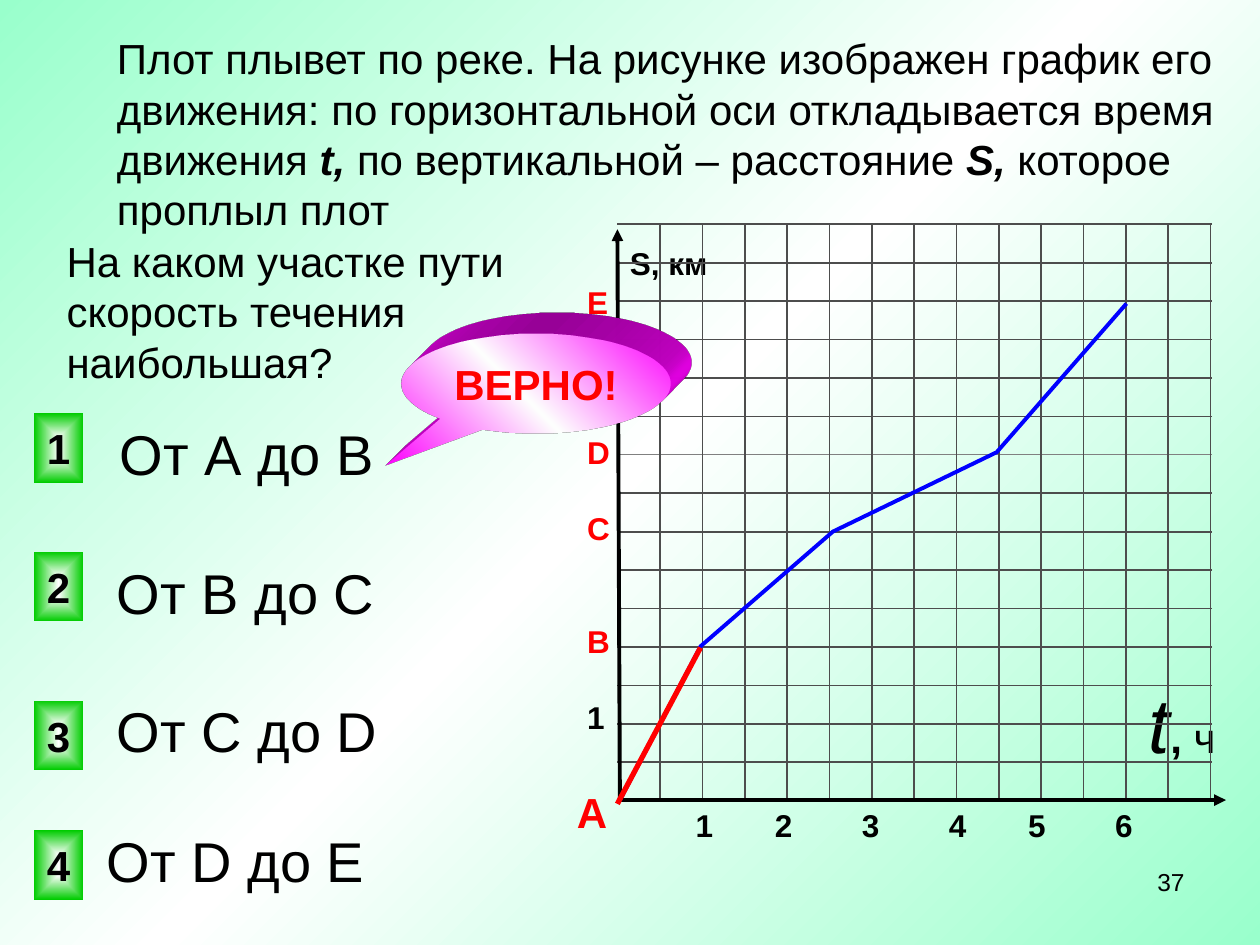
from lxml import etree
from pptx import Presentation
from pptx.dml.color import RGBColor
from pptx.enum.dml import MSO_THEME_COLOR
from pptx.enum.shapes import MSO_CONNECTOR, MSO_SHAPE
from pptx.enum.text import MSO_ANCHOR, PP_ALIGN
from pptx.oxml import parse_xml
from pptx.oxml.ns import nsdecls, qn
from pptx.util import Inches, Pt

BLACK = RGBColor(0x00, 0x00, 0x00)
WHITE = RGBColor(0xFF, 0xFF, 0xFF)
RED = RGBColor(0xFF, 0x00, 0x00)
BLUE = RGBColor(0x00, 0x00, 0xFF)
MINT = RGBColor(0x99, 0xFF, 0xCC)
GREEN = RGBColor(0x00, 0xCC, 0x00)
MAGENTA = RGBColor(0xFF, 0x00, 0xFF)
GRID = RGBColor(0x4D, 0x4D, 0x4D)
LIGHT_GRID = RGBColor(0x80, 0x80, 0x80)
FONT = "Arial"
LEFT, CENTER, RIGHT = PP_ALIGN.LEFT, PP_ALIGN.CENTER, PP_ALIGN.RIGHT
MIDDLE, TOP = MSO_ANCHOR.MIDDLE, MSO_ANCHOR.TOP
STRAIGHT = MSO_CONNECTOR.STRAIGHT

PROBLEM = [
    [("Плот плывет по реке. На рисунке изображен график его", False)],
    [("движения: по горизонтальной оси откладывается время", False)],
    [("движения ", False), ("t, ", True), ("по вертикальной – расстояние ", False),
     ("S, ", True), ("которое", False)],
    [("проплыл плот", False)],
]
ANSWERS = [
    ("1", 3.28, "От А до В", 0.85, 3.28),
    ("2", 4.38, "От В до С", 0.83, 4.38),
    ("3", 5.56, "От С до D", 0.83, 5.48),
    ("4", 6.59, "От D до E", 0.75, 6.51),
]
DISTANCE_LABELS = [("E", 0.62, RED), ("D", 1.81, RED), ("С", 2.41, RED),
                   ("В", 3.31, RED), ("1", 3.91, BLACK)]
TIME_LABELS = [("1", 0.69), ("2", 1.32), ("3", 2.01), ("4", 2.7), ("5", 3.33), ("6", 4.02)]
MOTION = [(0.02, 4.57), (0.66, 3.35), (1.71, 2.44), (3.01, 1.81), (4.04, 0.63)]
FASTEST = [(0.66, 3.36), (0, 4.6)]


def add_run(paragraph, text, size, color=BLACK, bold=False, italic=False):
    """Append one formatted run to a paragraph."""
    run = paragraph.add_run()
    run.text = text
    font = run.font
    font.name, font.size, font.bold, font.italic = FONT, Pt(size), bold, italic
    font.color.rgb = color


def add_text_box(slide, left, top, width, height, wrap=False, margins=True):
    """Add an empty text box and return its text frame."""
    box = slide.shapes.add_textbox(Inches(left), Inches(top), Inches(width), Inches(height))
    frame = box.text_frame
    frame.word_wrap = wrap
    if not margins:
        frame.margin_left = frame.margin_right = frame.margin_top = frame.margin_bottom = 0
    return frame


def add_label(slide, left, top, width, height, text, size, color=BLACK, bold=False,
              align=LEFT, wrap=False, margins=True, anchor=TOP):
    """Add a text box that holds a single run."""
    frame = add_text_box(slide, left, top, width, height, wrap, margins)
    frame.vertical_anchor = anchor
    paragraph = frame.paragraphs[0]
    paragraph.alignment = align
    add_run(paragraph, text, size, color, bold)


def set_gradient(fill, element, stops, direction):
    """Give the fill inside an element gradient stops and a direction."""
    fill.solid()
    fill.fore_color.theme_color = MSO_THEME_COLOR.ACCENT_1
    solid = next(element.iter(qn("a:solidFill")))
    stop_xml = "".join(
        f'<a:gs pos="{position * 1000}"><a:srgbClr val="{color}"/></a:gs>'
        for position, color in stops)
    gradient = parse_xml(f'<a:gradFill {nsdecls("a")} rotWithShape="1">'
                         f"<a:gsLst>{stop_xml}</a:gsLst>{direction}</a:gradFill>")
    solid.getparent().replace(solid, gradient)


def add_line(slide, start, end, color, width, arrow=False):
    """Draw a straight line, with an arrowhead at its end if asked."""
    connector = slide.shapes.add_connector(
        STRAIGHT, *(Inches(value) for value in (*start, *end)))
    connector.line.color.rgb = color
    connector.line.width = Pt(width)
    if arrow:
        etree.SubElement(connector.line._get_or_add_ln(), qn("a:tailEnd"), type="triangle")
    etree.SubElement(connector._element.spPr, qn("a:effectLst"))


def add_polyline(slide, left, top, points, color, width):
    """Draw an open outline through points relative to a corner."""
    vertices = [(Inches(left + x), Inches(top + y)) for x, y in points]
    builder = slide.shapes.build_freeform(*vertices[0])
    builder.add_line_segments(vertices[1:], close=False)
    shape = builder.convert_to_shape()
    shape.shadow.inherit = False
    shape.fill.background()
    shape.line.color.rgb = color
    shape.line.width = Pt(width)


def add_grid(slide, left, top, width, height):
    """Draw the squared field with its two axes."""
    row_step, column_step = 0.305, 0.336
    for row in range(15):
        y = top + row * row_step
        color, weight = (LIGHT_GRID, 0.75) if row == 6 else (GRID, 1)
        add_line(slide, (left, y), (left + width, y), color, weight)
    for column in range(14):
        x = left + 0.34 + column * column_step
        add_line(slide, (x, top), (x, top + height), GRID, 1)
    origin = (left + 0.02, top + 4.57)
    add_line(slide, origin, (left + 4.83, origin[1]), BLACK, 2.25, True)
    add_line(slide, origin, (left, top + 0.04), BLACK, 2.25, True)


def add_axis_labels(slide, left, top):
    """Name the axes and mark their values."""
    style = {"bold": True, "margins": False, "anchor": MIDDLE}
    add_label(slide, left + 0.1, top + 0.16, 0.7, 0.3, "S, км", 18, **style)
    for text, center, color in DISTANCE_LABELS:
        add_label(slide, left - 0.24, top + center - 0.15, 0.2, 0.3, text, 18, color, **style)
    for text, center in TIME_LABELS:
        add_label(slide, left + center - 0.15, top + 4.62, 0.3, 0.3, text, 18,
                  align=CENTER, **style)
    paragraph = add_text_box(slide, left + 4.12, top + 3.54, 0.82, 0.83).paragraphs[0]
    add_run(paragraph, "t", 44, italic=True)
    add_run(paragraph, ", ", 24, bold=True)
    add_run(paragraph, "ч", 24)


def add_graph(slide, left, top, width, height):
    """Build the distance graph in its box."""
    add_axis_labels(slide, left, top)
    add_grid(slide, left, top, width, height)
    add_polyline(slide, left, top, MOTION, BLUE, 2.25)
    add_polyline(slide, left, top, FASTEST, RED, 3)
    add_label(slide, left - 0.42, top + 4.41, 0.44, 0.5, "А", 24, RED, True)


def add_problem(slide, left, top, width, height):
    """Write the problem statement."""
    frame = add_text_box(slide, left, top, width, height)
    for index, line in enumerate(PROBLEM):
        paragraph = frame.add_paragraph() if index else frame.paragraphs[0]
        for text, emphasis in line:
            add_run(paragraph, text, 24, bold=emphasis, italic=emphasis)


def add_filled_shape(slide, kind, box, text, color, stops, direction):
    """Add a gradient shape with centred bold text and return it."""
    shape = slide.shapes.add_shape(kind, *(Inches(value) for value in box))
    shape.shadow.inherit = False
    shape.line.fill.background()
    set_gradient(shape.fill, shape._element.spPr, stops, direction)
    frame = shape.text_frame
    frame.word_wrap = False
    frame.vertical_anchor = MIDDLE
    frame.paragraphs[0].alignment = CENTER
    add_run(frame.paragraphs[0], text, 24, color, True)
    return shape


def add_answer(slide, number, button_top, text, left, top):
    """Place one numbered button with its answer."""
    center = ('<a:path path="rect"><a:fillToRect l="50000" t="50000" '
              'r="50000" b="50000"/></a:path>')
    add_filled_shape(slide, MSO_SHAPE.ACTION_BUTTON_CUSTOM, (0.27, button_top, 0.39, 0.55),
                     number, BLACK, [(0, WHITE), (100, GREEN)], center)
    add_label(slide, left, top, 2.37, 0.63, text, 32)


def add_callout(slide, left, top, width, height):
    """Add the raised speech bubble that confirms the answer."""
    callout = add_filled_shape(
        slide, MSO_SHAPE.OVAL_CALLOUT, (left, top, width, height), "ВЕРНО!", RED,
        [(0, MAGENTA), (50, WHITE), (100, MAGENTA)], '<a:lin ang="18900000" scaled="1"/>')
    callout.adjustments[0], callout.adjustments[1] = -0.56, 0.82
    properties = callout._element.spPr
    properties.append(parse_xml(
        f'<a:scene3d {nsdecls("a")}><a:camera prst="legacyObliqueTopRight"/>'
        '<a:lightRig rig="legacyFlat3" dir="b"/></a:scene3d>'))
    properties.append(parse_xml(
        f'<a:sp3d {nsdecls("a")} extrusionH="430200" prstMaterial="legacyMatte">'
        f'<a:extrusionClr><a:srgbClr val="{MAGENTA}"/></a:extrusionClr></a:sp3d>'))


def main():
    """Build the slide and save it."""
    presentation = Presentation()
    presentation.slide_width, presentation.slide_height = Inches(10), Inches(7.5)
    slide = presentation.slides.add_slide(presentation.slide_layouts[6])
    set_gradient(slide.background.fill, slide._element,
                 [(0, MINT), (50, WHITE), (100, MINT)], '<a:lin ang="2700000" scaled="1"/>')
    add_problem(slide, 0.83, 0.21, 9.03, 1.7)
    add_graph(slide, 4.9, 1.78, 4.72, 4.58)
    add_label(slide, 0.43, 1.82, 3.86, 1.3,
              "На каком участке пути скорость течения наибольшая?", 24, wrap=True)
    for answer in ANSWERS:
        add_answer(slide, *answer)
    add_callout(slide, 3.19, 2.65, 2.13, 0.79)
    add_label(slide, 7.17, 6.83, 2.33, 0.52, "37", 14, align=RIGHT, wrap=True)
    presentation.save("out.pptx")


if __name__ == "__main__":
    main()
